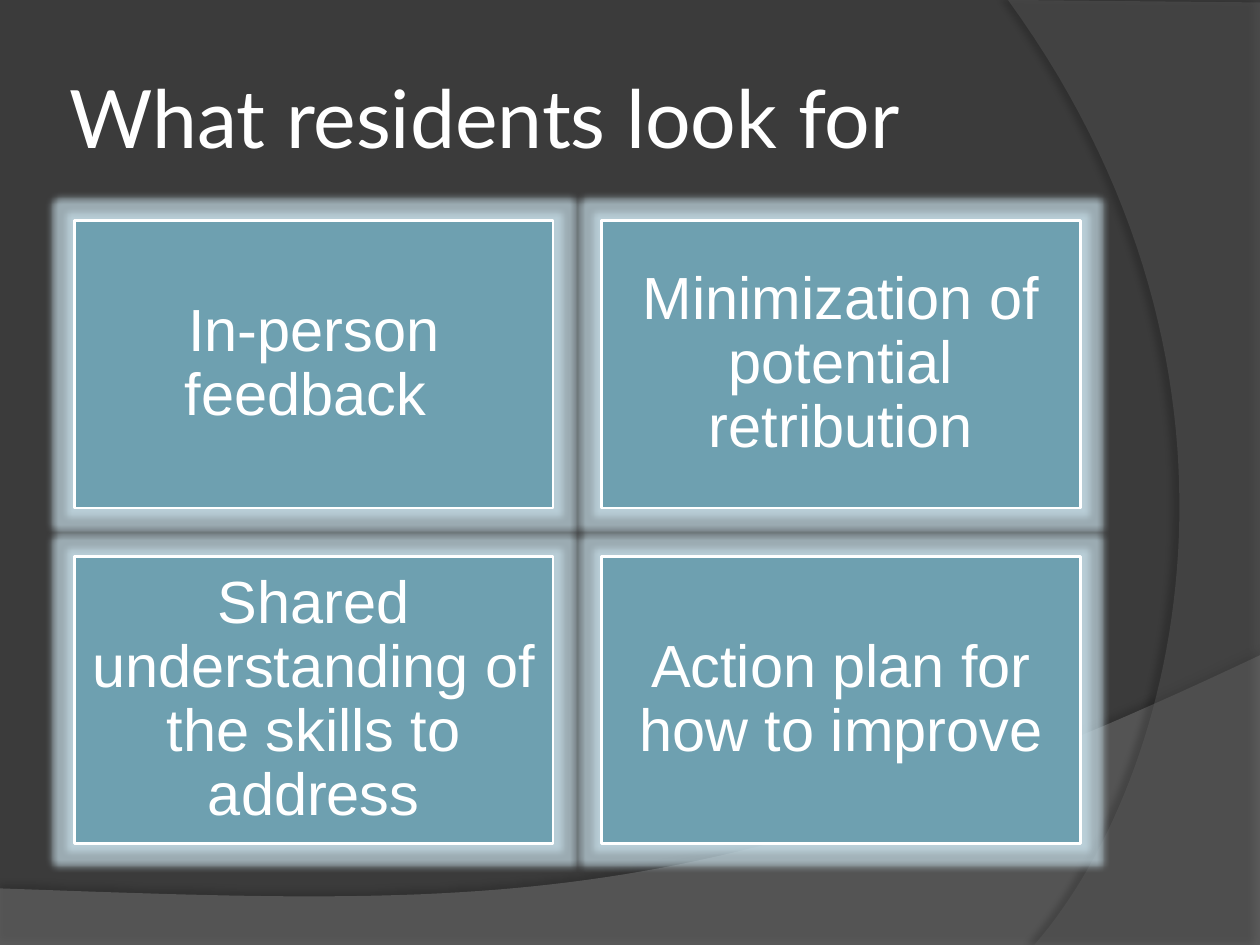
from dataclasses import dataclass

from lxml.etree import SubElement
from pptx import Presentation
from pptx.dml.color import RGBColor as Rgb
from pptx.enum.shapes import MSO_SHAPE as Preset
from pptx.enum.text import MSO_ANCHOR as Anchor, PP_ALIGN as Align
from pptx.oxml.ns import qn
from pptx.util import Cm, Pt


@dataclass(frozen=True)
class Theme:
    background: str = "3B3B3B"
    wave: str = "7F7F7F"
    arc: str = "5E5E5E"
    card: str = "6EA0B0"
    glow: str = "C5DCE6"
    shade: str = "000000"
    ink: str = "FFFFFF"
    title_font: str = "Lato"
    card_font: str = "Arial"
    title_size: int = 46
    card_size: int = 34
    border: float = 1.5


THEME = Theme()
EXPECTATIONS = (
    "In-person feedback ",
    "Minimization of potential retribution",
    "Shared understanding of the skills to address",
    "Action plan for how to improve",
)


def apply(target, values):
    for name, value in values.items():
        setattr(target, name, value)


def paint(fill, colour, opacity=100):
    fill.solid()
    fill.fore_color.rgb = Rgb.from_string(colour)
    if opacity < 100:
        tint = fill._xPr.find(".//" + qn("a:srgbClr"))
        SubElement(tint, qn("a:alpha"), val=str(opacity * 1000))


def add_effect(shape, kind, colour, opacity, **settings):
    shape.shadow.inherit = False
    effects = shape._element.spPr.find(qn("a:effectLst"))
    attributes = {name: str(int(value)) for name, value in settings.items()}
    effect = SubElement(effects, qn(kind), **attributes)
    tint = SubElement(effect, qn("a:srgbClr"), val=colour)
    SubElement(tint, qn("a:alpha"), val=str(opacity * 1000))


def curve(start, pull_out, pull_in, end, steps=60):
    for step in range(1, steps + 1):
        t = step / steps
        weights = ((1 - t) ** 3, 3 * t * (1 - t) ** 2, 3 * t * t * (1 - t), t ** 3)
        corners = (start, pull_out, pull_in, end)
        yield tuple(sum(w * c[axis] for w, c in zip(weights, corners)) for axis in (0, 1))


def add_backdrop(slide, edge, bend, colour, opacity, shade, distance, angle):
    outline = [*edge, *curve(edge[-1], *bend)]
    points = [(Cm(x), Cm(y)) for x, y in outline]
    builder = slide.shapes.build_freeform(*points[0])
    builder.add_line_segments(points[1:], close=True)
    backdrop = builder.convert_to_shape()
    paint(backdrop.fill, colour, opacity)
    backdrop.line.fill.background()
    add_effect(backdrop, "a:outerShdw", THEME.shade, shade,
               blurRad=Pt(4), dist=Pt(distance), dir=angle * 60000)


def write(shape, wording, margin, font, size, **paragraph_format):
    frame = shape.text_frame
    sides = ("left", "top", "right", "bottom")
    apply(frame, {f"margin_{side}": Cm(margin) for side in sides})
    apply(frame, {"word_wrap": True, "vertical_anchor": Anchor.MIDDLE})
    paragraph = frame.paragraphs[0]
    apply(paragraph, paragraph_format)
    run = paragraph.add_run()
    run.text = wording
    apply(run.font, {"name": font, "size": Pt(size)})
    run.font.color.rgb = Rgb.from_string(THEME.ink)


def add_title(slide, wording):
    title = slide.shapes.add_textbox(Cm(1.27), Cm(0.76), Cm(20.75), Cm(3.18))
    write(title, wording, 0.13, THEME.title_font, THEME.title_size, alignment=Align.LEFT)


def add_card(slide, wording, left, top, width, height):
    card = slide.shapes.add_shape(Preset.RECTANGLE, Cm(left), Cm(top), Cm(width), Cm(height))
    paint(card.fill, THEME.card)
    paint(card.line.fill, THEME.ink)
    card.line.width = Pt(THEME.border)
    add_effect(card, "a:glow", THEME.glow, 70, rad=Pt(8))
    write(card, wording, 0.36, THEME.card_font, THEME.card_size,
          alignment=Align.CENTER, line_spacing=0.9)


def add_card_grid(slide, wordings, columns=2):
    left, top, width, height, gap = 1.5, 4.45, 9.65, 5.79, 0.98
    for index, wording in enumerate(wordings):
        row, column = divmod(index, columns)
        add_card(slide, wording, left + column * (width + gap),
                 top + row * (height + gap), width, height)


def main():
    deck = Presentation()
    apply(deck, {"slide_width": Cm(25.4), "slide_height": Cm(19.05)})
    slide = deck.slides.add_slide(deck.slide_layouts[6])
    paint(slide.background.fill, THEME.background)
    add_backdrop(slide, [(0, 17.91), (0, 19.05), (25.4, 19.05), (25.4, 13.21)],
                 [(14.2, 18.52), (9.93, 18.26), (0, 17.91)],
                 THEME.wave, 45, shade=35, distance=3.5, angle=270)
    add_backdrop(slide, [(25.4, 0.05), (25.4, 19.05), (20.85, 19.05)],
                 [(23.75, 15.72), (25.86, 7.62), (20.32, 0)],
                 THEME.arc, 40, shade=45, distance=4, angle=180)
    add_title(slide, "What residents look for")
    add_card_grid(slide, EXPECTATIONS)
    deck.save("out.pptx")


if __name__ == "__main__":
    main()
